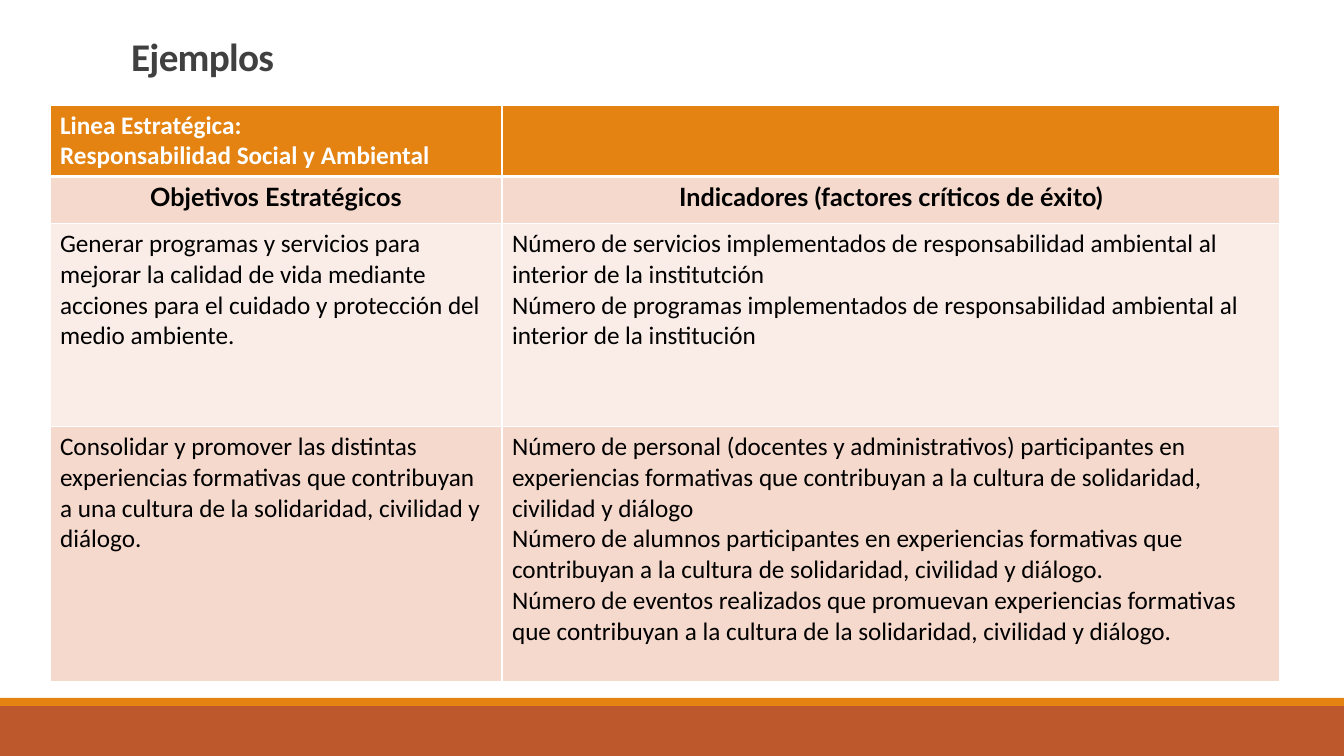
from lxml import etree
from pptx import Presentation
from pptx import util as u
from pptx.dml.color import RGBColor
from pptx.enum import shapes, text
from pptx.oxml import ns

PX = 914400 / 100.8
WHITE = RGBColor(0xFF, 0xFF, 0xFF)
BLACK = RGBColor(0, 0, 0)
GREY = RGBColor(0x40, 0x40, 0x40)
ORANGE = RGBColor(0xE4, 0x83, 0x12)
RUST = RGBColor(0xBD, 0x58, 0x2C)
PINK = RGBColor(0xF5, 0xD9, 0xCC)
PALE = RGBColor(0xFA, 0xED, 0xE7)


def px(*lengths):
    return [u.Emu(round(n * PX)) for n in lengths]


def set_borders(cell, bottom_width):
    props = cell._tc.get_or_add_tcPr()
    widths = {"lnL": 1, "lnR": 1, "lnT": 1, "lnB": bottom_width}
    for place, (side, points) in enumerate(widths.items()):
        line = etree.Element(ns.qn(f"a:{side}"), w=str(u.Pt(points)))
        fill = etree.SubElement(line, ns.qn("a:solidFill"))
        etree.SubElement(fill, ns.qn("a:srgbClr"), val=str(WHITE))
        props.insert(place, line)


prs = Presentation()
prs.slide_width, prs.slide_height = px(1344, 756)
slide = prs.slides.add_slide(prs.slide_layouts[5])

# Footer bands
for top, height, color in [(706, 50, RUST), (698, 8, ORANGE)]:
    band = slide.shapes.add_shape(shapes.MSO_SHAPE.RECTANGLE, *px(0, top, 1344, height))
    band.shadow.inherit = False
    band.fill.solid()
    band.fill.fore_color.rgb = color
    band.line.fill.background()

# Title
title = slide.shapes.title
title.left, title.top, title.width, title.height = px(121, 31, 1109, 54)
title.text_frame.text = "Ejemplos"
title.text_frame.vertical_anchor = text.MSO_ANCHOR.BOTTOM
title.text_frame.auto_size = text.MSO_AUTO_SIZE.NONE
heading = title.text_frame.paragraphs[0]
heading.alignment = text.PP_ALIGN.LEFT
heading.line_spacing = 0.85
heading.font.name = "Calibri"
heading.font.size = u.Pt(28)
heading.font.bold = True
heading.font.color.rgb = GREY
heading.runs[0].font._element.set("spc", "-50")

# Objectives and their indicators: height, fill, font, bold, text colour, cells
rows = [
    (71, ORANGE, "Calibri", True, WHITE, [
        ["Linea Estratégica:", "Responsabilidad Social y Ambiental"],
        [],
    ]),
    (47, PINK, "Lato", True, BLACK, [
        ["Objetivos Estratégicos"],
        ["Indicadores (factores críticos de éxito)"],
    ]),
    (203, PALE, "Calibri", False, BLACK, [
        ["Generar programas y servicios para mejorar la calidad de vida mediante "
         "acciones para el cuidado y protección del medio ambiente."],
        ["Número de servicios implementados de responsabilidad ambiental al "
         "interior de la institutción",
         "Número de programas implementados de responsabilidad ambiental al "
         "interior de la institución"],
    ]),
    (255, PINK, "Calibri", False, BLACK, [
        ["Consolidar y promover las distintas experiencias formativas que "
         "contribuyan a una cultura de la solidaridad, civilidad y diálogo."],
        ["Número de personal (docentes y administrativos) participantes en "
         "experiencias formativas que contribuyan a la cultura de solidaridad, "
         "civilidad y diálogo",
         "Número de alumnos participantes en experiencias formativas que "
         "contribuyan a la cultura de solidaridad, civilidad y diálogo.",
         "Número de eventos realizados que promuevan experiencias formativas "
         "que contribuyan a la cultura de la solidaridad, civilidad y diálogo."],
    ]),
]
total_height = sum(row[0] for row in rows)
plan = slide.shapes.add_table(len(rows), 2, *px(50, 105, 1230, total_height)).table
plan.columns[0].width, plan.columns[1].width = px(452, 778)

for r, (height, fill, font, bold, color, cells) in enumerate(rows):
    plan.rows[r].height = px(height)[0]
    for c, lines in enumerate(cells):
        cell = plan.cell(r, c)
        cell.fill.solid()
        cell.fill.fore_color.rgb = fill
        set_borders(cell, 3 if r == 0 else 1)
        cell.text_frame.text = "\n".join(lines)
        for paragraph in cell.text_frame.paragraphs:
            paragraph.font.name = font
            paragraph.font.size = u.Pt(18)
            paragraph.font.bold = bold
            paragraph.font.color.rgb = color
            if r == 1:
                paragraph.alignment = text.PP_ALIGN.CENTER

prs.save("out.pptx")
